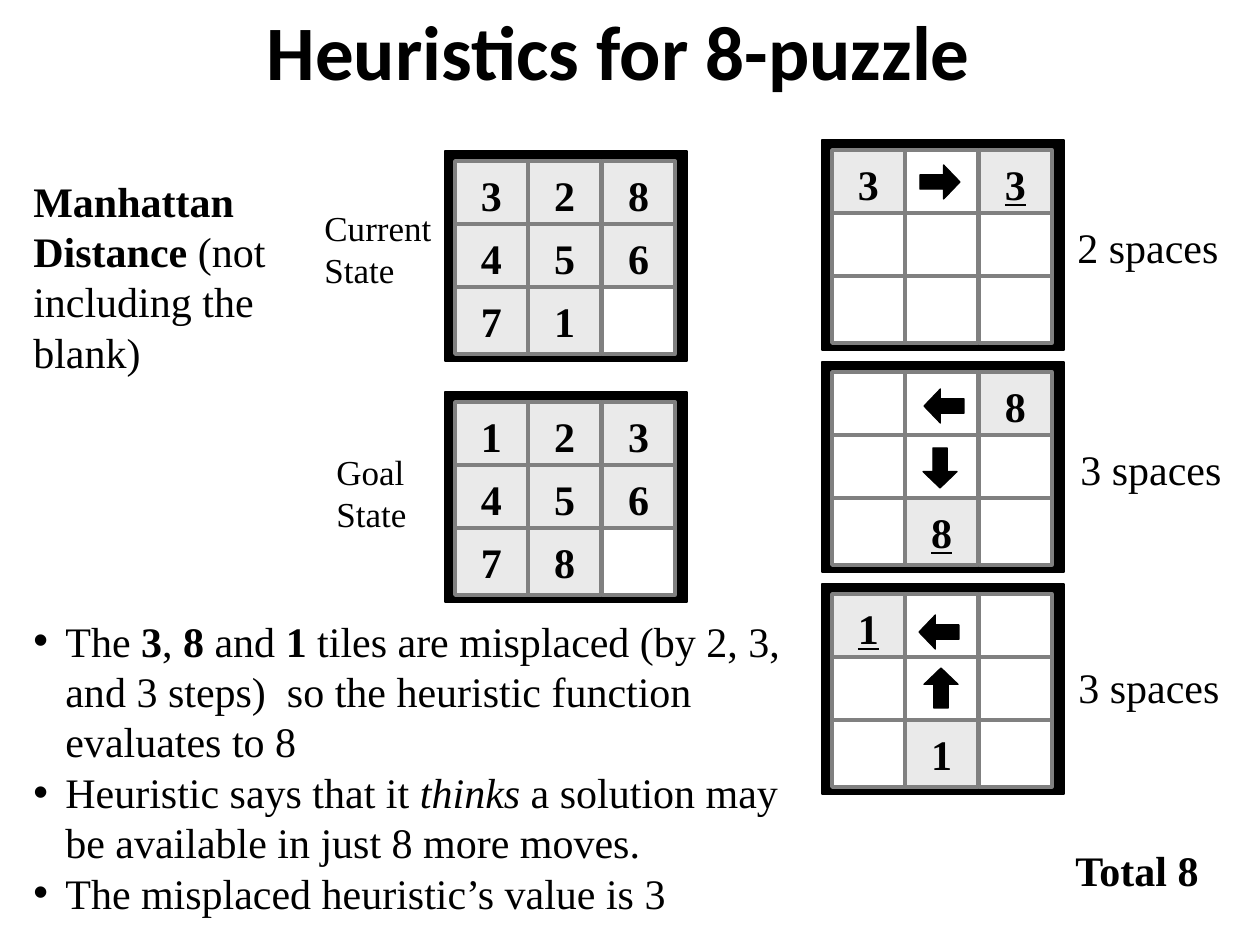
from dataclasses import dataclass

from lxml.etree import SubElement
from pptx import Presentation
from pptx.dml.color import RGBColor
from pptx.enum.shapes import MSO_SHAPE as Shape
from pptx.enum.text import MSO_ANCHOR as Anchor, MSO_AUTO_SIZE as AutoSize, PP_ALIGN as Align
from pptx.oxml.ns import qn
from pptx.util import Emu, Pt


@dataclass(frozen=True)
class Theme:
    black: RGBColor = RGBColor(0, 0, 0)
    tile: RGBColor = RGBColor(0xEA, 0xEA, 0xEA)
    blank: RGBColor = RGBColor(0xFF, 0xFF, 0xFF)
    grid: RGBColor = RGBColor(0x80, 0x80, 0x80)
    title_font: str = "Calibri"
    body_font: str = "Times New Roman"
    title_size: int = 44
    body_size: int = 24
    label_size: int = 20
    thin_line: float = 0.75
    grid_line: float = 2


THEME = Theme()
BOARD_WIDTH, BOARD_HEIGHT = 242, 210
BOARD_INSET = 10
TILE_WIDTH, TILE_HEIGHT = 73, 67
COLUMN_OFFSETS = (0, 73, 147)
ROW_STEP = 63
ARROW_WIDTH, ARROW_HEIGHT = 40, 34


def px(length):
    return Emu(round(length * 914400 / 126))


def box(left, top, width, height):
    return px(left), px(top), px(width), px(height)


def style_font(font, size=THEME.body_size, name=THEME.body_font, bold=None):
    font.name, font.size, font.bold = name, Pt(size), bold
    font.color.rgb = THEME.black


def add_bullet(paragraph):
    properties = paragraph._p.get_or_add_pPr()
    properties.set("marL", str(px(32)))
    properties.set("indent", str(-px(32)))
    SubElement(properties, qn("a:buFont"), typeface="Arial")
    SubElement(properties, qn("a:buChar"), char="•")


def add_text(slide, bounds, paragraphs, wrap=True, bullets=False, **font):
    frame = slide.shapes.add_textbox(*box(*bounds)).text_frame
    frame.word_wrap = wrap
    frame.auto_size = AutoSize.SHAPE_TO_FIT_TEXT
    for index, runs in enumerate(paragraphs):
        paragraph = frame.paragraphs[0] if index == 0 else frame.add_paragraph()
        style_font(paragraph.font, **font)
        if bullets:
            add_bullet(paragraph)
        for text, emphasis in runs:
            run = paragraph.add_run()
            run.text = text
            if emphasis:
                setattr(run.font, emphasis, True)
    return frame


def add_title(slide, text):
    frame = add_text(slide, (92, -29, 1071, 158), [[(text, None)]],
                     size=THEME.title_size, name=THEME.title_font, bold=True)
    frame.auto_size = AutoSize.NONE
    frame.vertical_anchor = Anchor.MIDDLE
    frame.paragraphs[0].alignment = Align.CENTER


def add_filled(shapes, kind, bounds, fill, line, line_width):
    shape = shapes.add_shape(kind, *box(*bounds))
    shape.shadow.inherit = False
    shape.fill.solid()
    shape.fill.fore_color.rgb = fill
    shape.line.color.rgb = line
    shape.line.width = Pt(line_width)
    return shape


def add_tile(shapes, left, top, digit, underline):
    shape = add_filled(shapes, Shape.RECTANGLE, (left, top, TILE_WIDTH, TILE_HEIGHT),
                       THEME.tile if digit else THEME.blank, THEME.grid, THEME.grid_line)
    if digit:
        frame = shape.text_frame
        frame.vertical_anchor = Anchor.MIDDLE
        paragraph = frame.paragraphs[0]
        paragraph.text = digit
        paragraph.alignment = Align.CENTER
        style_font(paragraph.font, bold=True)
        paragraph.font.underline = underline


def add_board(shapes, left, top, rows, target=None):
    add_filled(shapes, Shape.RECTANGLE, (left, top, BOARD_WIDTH, BOARD_HEIGHT),
               THEME.black, THEME.black, THEME.thin_line)
    for row, digits in enumerate(rows):
        for column, digit in enumerate(digits):
            add_tile(shapes, left + BOARD_INSET + COLUMN_OFFSETS[column],
                     top + BOARD_INSET + row * ROW_STEP,
                     digit.strip(), (row, column) == target)


def add_arrow(slide, left, top, rotation):
    arrow = add_filled(slide.shapes, Shape.RIGHT_ARROW, (left, top, ARROW_WIDTH, ARROW_HEIGHT),
                       THEME.black, THEME.black, THEME.thin_line)
    arrow.adjustments[0], arrow.adjustments[1] = 0.42, 0.48
    arrow.rotation = rotation


def main():
    presentation = Presentation()
    presentation.slide_width, presentation.slide_height = px(1260), px(945)
    slide = presentation.slides.add_slide(presentation.slide_layouts[6])

    add_title(slide, "Heuristics for 8-puzzle ")
    add_text(slide, (21, 169, 291, 214),
             [[("Manhattan Distance", "bold"), (" (not including the blank)", None)]])
    add_text(slide, (21, 609, 798, 318), [
        [("The ", None), ("3", "bold"), (", ", None), ("8", "bold"), (" and ", None),
         ("1", "bold"), (" tiles are misplaced (by 2, 3, and 3 steps)  so the "
                         "heuristic function evaluates to 8", None)],
        [("Heuristic says that it ", None), ("thinks", "italic"),
         (" a solution may be available in just 8 more moves.", None)],
        [("The misplaced heuristic’s value is 3", None)],
    ], bullets=True)

    states = (
        (151, ("328", "456", "71 "), "Current State", (312, 200, 164, 97)),
        (392, ("123", "456", "78 "), "Goal State", (324, 444, 146, 97)),
    )
    for top, rows, label, bounds in states:
        add_board(slide.shapes.add_group_shape().shapes, 445, top, rows)
        add_text(slide, bounds, [[(label, None)]], size=THEME.label_size)

    moves = (
        (140, ("3 3", "   ", "   "), (0, 2), "2 spaces", 1065, 215),
        (362, ("  8", "   ", " 8 "), (2, 1), "3 spaces", 1068, 437),
        (584, ("1  ", "   ", " 1 "), (0, 0), "3 spaces", 1066, 655),
    )
    for top, rows, target, label, label_left, label_top in moves:
        add_board(slide.shapes, 822, top, rows, target)
        add_text(slide, (label_left, label_top, 166, 63), [[(label, None)]], wrap=False)

    arrows = ((920, 165, 0), (921, 671, 270), (919, 615, 180), (920, 451, 90), (924, 389, 180))
    for left, top, rotation in arrows:
        add_arrow(slide, left, top, rotation)

    add_text(slide, (1063, 838, 152, 63), [[("Total 8", None)]], wrap=False, bold=True)
    presentation.save("out.pptx")


if __name__ == "__main__":
    main()
